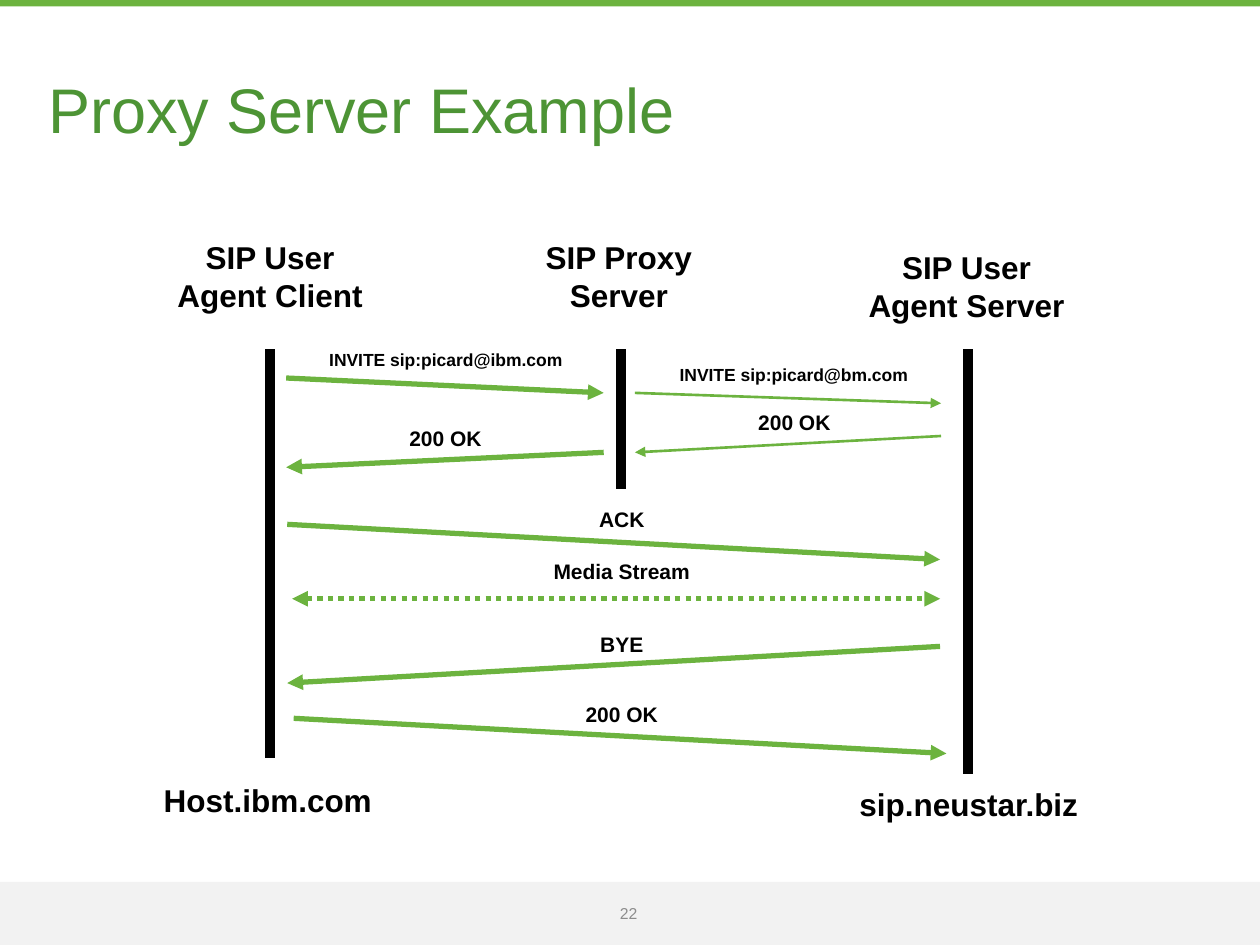
from lxml.etree import SubElement
from pptx import Presentation
from pptx.dml.color import RGBColor
from pptx.enum.dml import MSO_LINE
from pptx.enum.shapes import MSO_CONNECTOR, MSO_SHAPE
from pptx.enum.text import MSO_ANCHOR, PP_ALIGN
from pptx.oxml.ns import qn
from pptx.util import Cm, Pt

COLOURS = {"green": "6CB33F", "title": "4D9435", "footer": "F2F2F2",
           "number": "8C8C8C", "black": "000000"}
PAGE_WIDTH, PAGE_HEIGHT = 25.4, 19.05
LIFELINE_TOP = 7.04
LABEL_HEIGHT = 0.89

# x, bottom
LIFELINES = [(5.44, 15.29), (12.52, 9.86), (19.51, 15.6)]

# left, top, width, height, lines
PARTIES = [
    (3.12, 4.67, 4.65, 1.88, ["SIP User Agent Client"]),
    (9.91, 4.67, 5.13, 1.78, ["SIP Proxy", "Server"]),
    (17.07, 4.88, 4.83, 1.7, ["SIP User", "Agent Server"]),
    (2.72, 15.62, 5.36, 1.5, ["Host.ibm.com"]),
    (16.81, 15.7, 5.44, 1.57, ["sip.neustar.biz"]),
]

# text, size, label (left, top, width), arrow start, arrow end, line width
MESSAGES = [
    ("INVITE sip:picard@ibm.com", 10, (5.44, 6.91, 7.09), (5.77, 7.62), (12.17, 7.92), 3),
    ("INVITE sip:picard@bm.com", 10, (12.52, 7.21, 6.96), (12.8, 7.92), (18.97, 8.13), 1.5),
    ("200 OK", 12, (13.13, 8.13, 5.77), (18.97, 8.79), (12.8, 9.12), 1.5),
    ("200 OK", 12, (5.46, 8.46, 7.04), (12.17, 9.12), (5.77, 9.42), 3),
    ("ACK", 12, (9.65, 10.08, 5.77), (5.79, 10.57), (18.95, 11.28), 3),
    ("BYE", 12, (9.65, 12.6, 5.77), (18.95, 13.03), (5.79, 13.77), 3),
    ("200 OK", 12, (9.65, 14.02, 5.77), (5.92, 14.48), (19.08, 15.19), 3),
]


class SlideBuilder:
    """Holds the slide and its style; all lengths are in centimetres."""

    font = "Arial"

    def __init__(self, page):
        self.page = page

    def colour(self, name):
        return RGBColor.from_string(COLOURS[name])

    def band(self, top, height, colour):
        shape = self.page.shapes.add_shape(
            MSO_SHAPE.RECTANGLE, Cm(0), Cm(top), Cm(PAGE_WIDTH), Cm(height))
        shape.shadow.inherit = False
        shape.fill.solid()
        shape.fill.fore_color.rgb = self.colour(colour)
        shape.line.fill.background()

    def text(self, left, top, width, height, lines, size, colour="black",
             bold=True, align=PP_ALIGN.CENTER):
        box = self.page.shapes.add_textbox(Cm(left), Cm(top), Cm(width), Cm(height))
        frame = box.text_frame
        frame.word_wrap = True
        frame.text = "\n".join(lines)
        for paragraph in frame.paragraphs:
            paragraph.alignment = align
            paragraph.font.name = self.font
            paragraph.font.size = Pt(size)
            paragraph.font.bold = bold
            paragraph.font.color.rgb = self.colour(colour)
        return frame

    def middle_text(self, *args, bottom_inset=0, **style):
        """Add text centred vertically, with no other insets."""
        frame = self.text(*args, bold=False, **style)
        frame.vertical_anchor = MSO_ANCHOR.MIDDLE
        frame.margin_left = frame.margin_right = frame.margin_top = 0
        frame.margin_bottom = Cm(bottom_inset)
        return frame

    def line(self, start, end, width, colour):
        connector = self.page.shapes.add_connector(
            MSO_CONNECTOR.STRAIGHT, *map(Cm, (*start, *end)))
        connector.line.width = Pt(width)
        connector.line.color.rgb = self.colour(colour)
        SubElement(connector._element.spPr, qn("a:effectLst"))
        return connector

    def arrow(self, start, end, width, two_way=False):
        connector = self.line(start, end, width, "green")
        if two_way:
            connector.line.dash_style = MSO_LINE.ROUND_DOT
        outline = connector.line._get_or_add_ln()
        for tag in ["a:headEnd", "a:tailEnd"] if two_way else ["a:tailEnd"]:
            SubElement(outline, qn(tag), type="triangle")


def main():
    deck = Presentation()
    deck.slide_width, deck.slide_height = Cm(PAGE_WIDTH), Cm(PAGE_HEIGHT)
    builder = SlideBuilder(deck.slides.add_slide(deck.slide_layouts[6]))

    builder.band(17.78, 1.27, "footer")
    builder.band(0, 0.13, "green")
    title = builder.middle_text(0.97, 0.76, 23.5, 3.18, ["Proxy Server Example"], 36,
                                colour="title", align=PP_ALIGN.LEFT, bottom_inset=0.13)
    title.paragraphs[0].line_spacing = 0.9
    builder.middle_text(12.14, 18.03, 1.07, 0.76, ["22"], 9, colour="number")

    for x, bottom in LIFELINES:
        builder.line((x, LIFELINE_TOP), (x, bottom), 6, "black")
    for left, top, width, height, lines in PARTIES:
        builder.text(left, top, width, height, lines, 18)
    for text, size, place, start, end, width in MESSAGES:
        builder.text(*place, LABEL_HEIGHT, [text], size)
        builder.arrow(start, end, width)
    builder.text(10.67, 11.13, 3.73, LABEL_HEIGHT, ["Media Stream"], 12)
    builder.arrow((5.89, 12.07), (18.95, 12.07), 3, two_way=True)

    deck.save("out.pptx")


if __name__ == "__main__":
    main()
